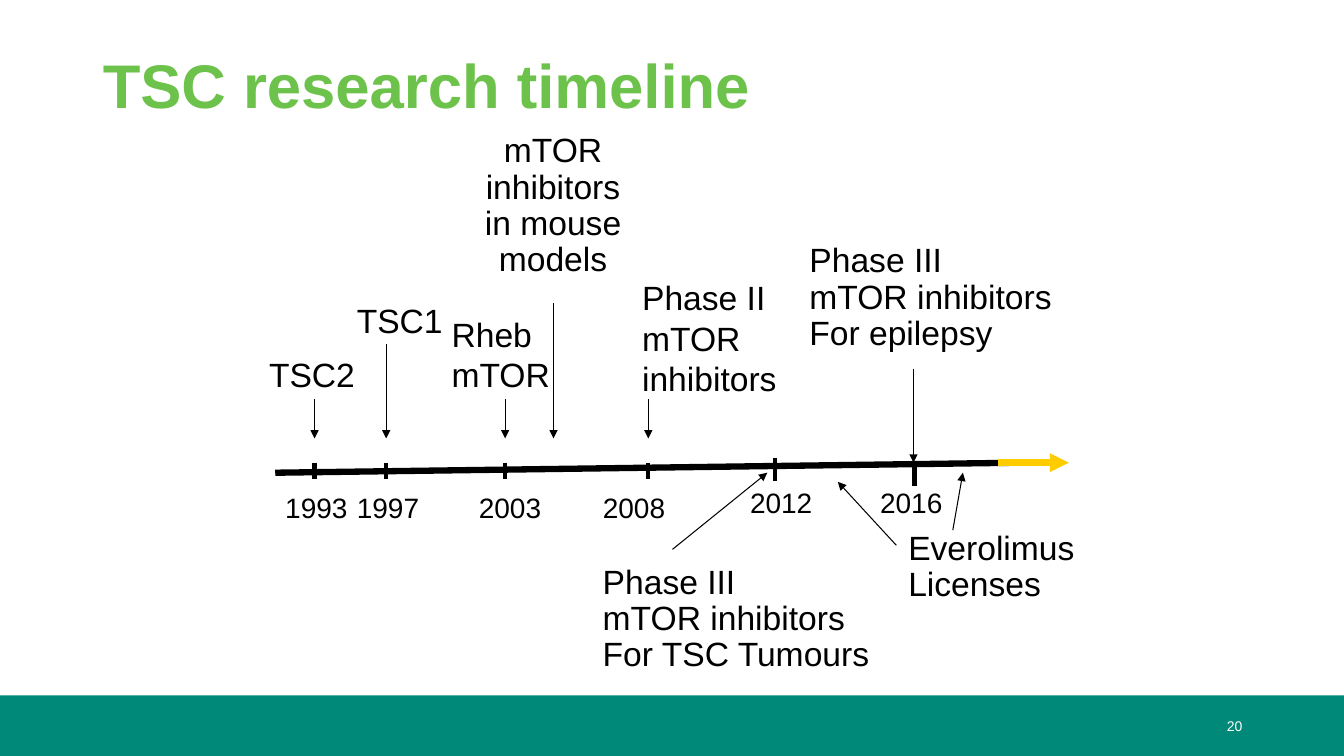
from lxml import etree
from pptx import Presentation
from pptx import util as u
from pptx.dml.color import RGBColor
from pptx.enum import shapes, text
from pptx.oxml import ns

BLACK = RGBColor(0x00, 0x00, 0x00)
WHITE = RGBColor(0xFF, 0xFF, 0xFF)
GREEN = RGBColor(0x6C, 0xC2, 0x4A)
TEAL = RGBColor(0x00, 0x88, 0x78)
YELLOW = RGBColor(0xFF, 0xCC, 0x00)
FONT = "Arial"

YEARS = [
    ("1993", 2.73, 4.82), ("1997", 3.44, 4.82), ("2003", 4.65, 4.82),
    ("2008", 5.88, 4.82), ("2012", 7.34, 4.77), ("2016", 8.63, 4.77),
]
TICKS = [
    (3.12, 4.59, 4.75), (3.83, 4.59, 4.75), (5.01, 4.59, 4.75),
    (6.43, 4.59, 4.75), (7.69, 4.54, 4.77), (9.07, 4.59, 4.82),
]
EVENT_ARROWS = [
    (3.12, 3.96, 3.12, 4.35), (3.83, 3.41, 3.83, 4.35),
    (5.01, 3.96, 5.01, 4.35), (5.49, 3.01, 5.49, 4.35),
    (6.43, 3.96, 6.43, 4.35), (9.06, 3.66, 9.06, 4.59),
    (6.67, 5.45, 7.61, 4.69), (8.89, 5.41, 8.31, 4.78),
    (9.45, 5.26, 9.55, 4.69),
]
EVENTS = [
    (["TSC2"], (2.57, 3.46, 1.05, 0.5), {}),
    (["TSC1"], (3.44, 2.93, 1.05, 0.5), {}),
    (["Rheb", "mTOR"], (4.38, 3.06, 1.19, 0.91), {}),
    (["mTOR", "inhibitors", "in mouse models"], (4.7, 1.28, 1.57, 1.56),
     {"wrap": True, "spacing": 0.9, "align": text.PP_ALIGN.CENTER}),
    (["Phase II", "mTOR inhibitors"], (6.27, 2.7, 2.55, 2.12), {"wrap": True}),
    (["Phase III", "mTOR inhibitors", "For TSC Tumours"],
     (5.88, 5.56, 2.87, 1.92), {"spacing": 0.9}),
    (["Everolimus", "Licenses"], (8.91, 5.22, 2.02, 1.19), {"spacing": 0.9}),
    (["Phase III", "mTOR inhibitors", "For epilepsy"],
     (7.93, 2.37, 2.7, 1.92), {"spacing": 0.9}),
]


def write_text(shape, lines, size=24, color=BLACK, bold=False, wrap=False,
               spacing=None, align=text.PP_ALIGN.LEFT,
               anchor=text.MSO_ANCHOR.TOP,
               auto_size=text.MSO_AUTO_SIZE.SHAPE_TO_FIT_TEXT):
    """Fill a shape with one formatted paragraph per line."""
    frame = shape.text_frame
    frame.text = "\n".join(lines)
    frame.word_wrap = wrap
    frame.auto_size = auto_size
    frame.vertical_anchor = anchor
    for paragraph in frame.paragraphs:
        paragraph.alignment = align
        paragraph.line_spacing = spacing
        font = paragraph.font
        font.name, font.size, font.bold = FONT, u.Pt(size), bold
        font.color.rgb = color


def add_label(slide, lines, box, **text_format):
    """Add a text box at the given left, top, width and height."""
    shape = slide.shapes.add_textbox(*map(u.Inches, box))
    write_text(shape, lines, **text_format)


def add_line(slide, ends, width, color=BLACK, arrow=False):
    """Add a straight line, with an optional arrowhead at its end."""
    line = slide.shapes.add_connector(
        shapes.MSO_CONNECTOR.STRAIGHT, *map(u.Inches, ends))
    line.line.width = u.Pt(width)
    line.line.color.rgb = color
    if arrow:
        etree.SubElement(line.line._get_or_add_ln(), ns.qn("a:tailEnd"),
                         type="triangle")
    etree.SubElement(line._element.spPr, ns.qn("a:effectLst"))


def add_footer(slide):
    """Add the coloured footer band and the slide number."""
    band = slide.shapes.add_shape(
        shapes.MSO_SHAPE.RECTANGLE,
        *map(u.Inches, (0, 6.9, 13.33, 0.6)))
    band.shadow.inherit = False
    band.fill.solid()
    band.fill.fore_color.rgb = TEAL
    band.line.fill.background()
    add_label(slide, ["20"], (9.42, 6.9, 3, 0.6), size=10, color=WHITE,
              wrap=True, align=text.PP_ALIGN.RIGHT,
              anchor=text.MSO_ANCHOR.MIDDLE,
              auto_size=text.MSO_AUTO_SIZE.NONE)


def add_title(slide, title_text):
    """Place and format the title placeholder."""
    title = slide.shapes.title
    title.left, title.top, title.width, title.height = map(
        u.Inches, (0.92, 0.44, 9.84, 0.82))
    write_text(title, [title_text], size=44, color=GREEN, bold=True, wrap=True,
               spacing=0.9, anchor=text.MSO_ANCHOR.BOTTOM,
               auto_size=text.MSO_AUTO_SIZE.NONE)


def add_timeline(slide):
    """Draw the axis with its yellow tip, ticks and years."""
    add_line(slide, (2.73, 4.69, 10.15, 4.59), 4.5)
    add_line(slide, (9.9, 4.59, 10.6, 4.59), 4.5, YELLOW, arrow=True)
    for x, top, bottom in TICKS:
        add_line(slide, (x, top, x, bottom), 3)
    for year, left, top in YEARS:
        add_label(slide, [year], (left, top, 0.82, 0.43), size=20)


def main():
    """Build and save the slide."""
    presentation = Presentation()
    presentation.slide_width = u.Inches(13.33)
    presentation.slide_height = u.Inches(7.5)
    slide = presentation.slides.add_slide(presentation.slide_layouts[5])
    add_footer(slide)
    add_title(slide, "TSC research timeline")
    add_timeline(slide)
    for ends in EVENT_ARROWS:
        add_line(slide, ends, 0.75, arrow=True)
    for lines, box, text_format in EVENTS:
        add_label(slide, lines, box, **text_format)
    presentation.save("out.pptx")


if __name__ == "__main__":
    main()
